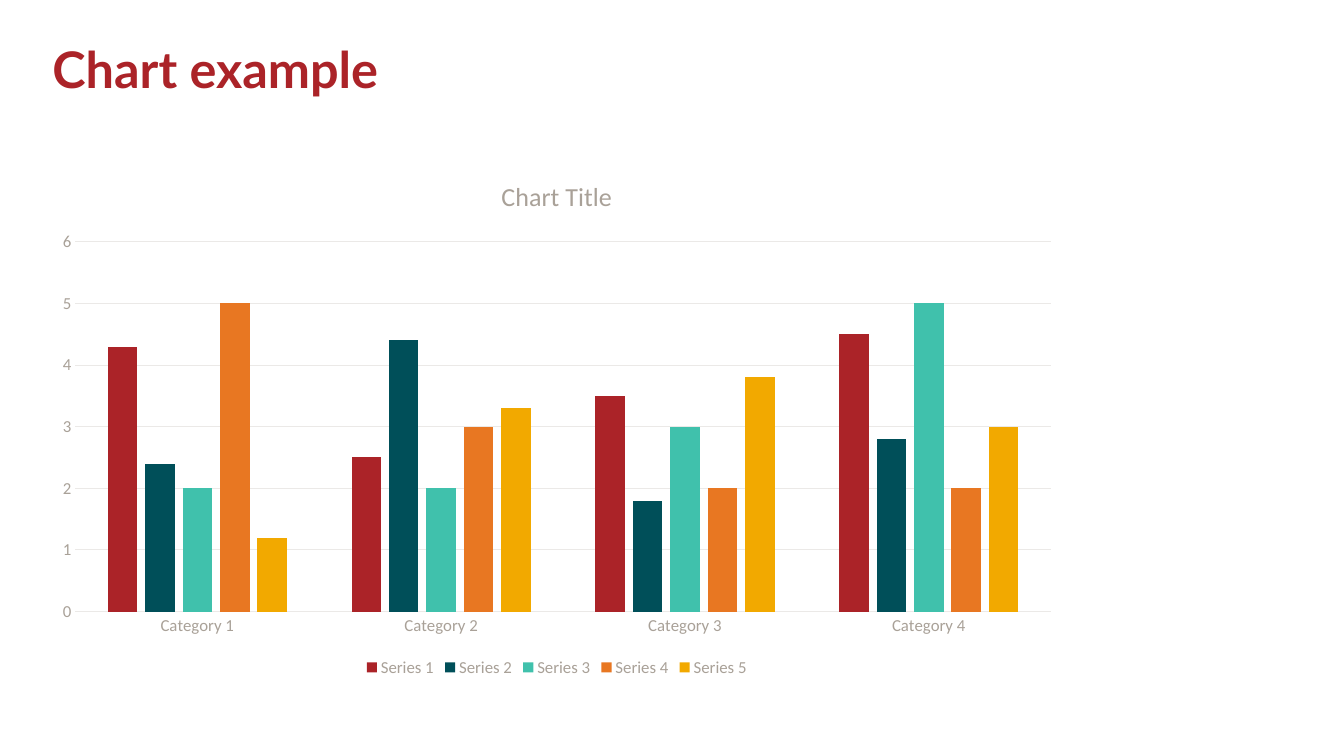
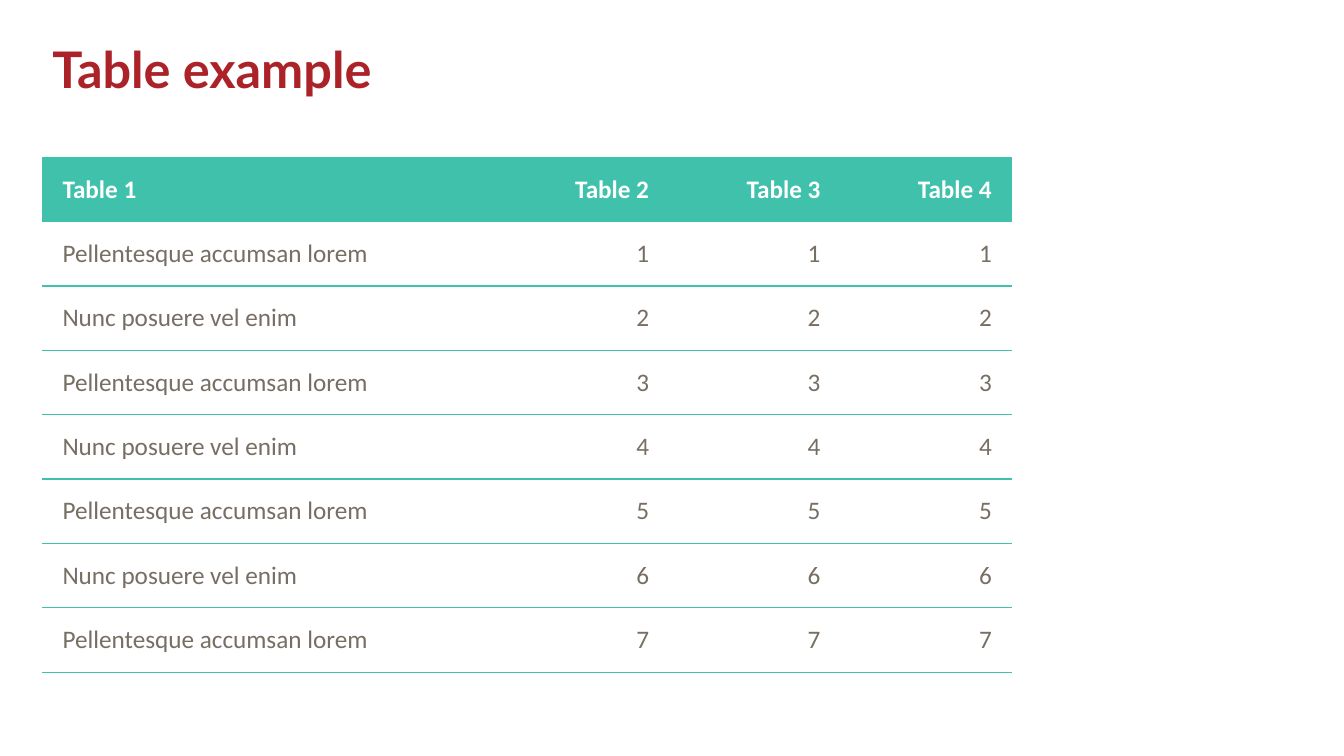
from lxml.etree import SubElement
from pptx import Presentation
from pptx.chart.data import CategoryChartData
from pptx.dml.color import RGBColor
from pptx.enum.chart import XL_CHART_TYPE as ChartType
from pptx.enum.chart import XL_LEGEND_POSITION as LegendPosition
from pptx.enum.chart import XL_TICK_MARK as TickMark
from pptx.enum.text import MSO_ANCHOR as Anchor
from pptx.enum.text import MSO_AUTO_SIZE as AutoSize
from pptx.enum.text import PP_ALIGN as Align
from pptx.oxml.ns import qn
from pptx.util import Pt

RED, NAVY, TEAL = "AB2328", "004F59", "40C1AC"
ORANGE, YELLOW, WHITE = "E87722", "F2A900", "FFFFFF"
TEXT, MUTED, RULE = "776E64", "A9A198", "EBE9E7"
TITLE_FONT, BODY_FONT = "Lato", "Calibri"

SLIDE_WIDTH, SLIDE_HEIGHT = 960, 540
LEFT, CONTENT_TOP = 30.24, 112.3
TITLE_BOX = (LEFT, 28.8, 735, 75.6)
CHART_BOX = (LEFT, CONTENT_TOP, 735, 374.4)
TABLE_BOX = (LEFT, CONTENT_TOP, 692.6, 368)

CATEGORIES = [f"Category {number}" for number in range(1, 5)]
SERIES = [
    (RED, (4.3, 2.5, 3.5, 4.5)),
    (NAVY, (2.4, 4.4, 1.8, 2.8)),
    (TEAL, (2, 2, 3, 5)),
    (ORANGE, (5, 3, 2, 2)),
    (YELLOW, (1.2, 3.3, 3.8, 3)),
]
ROW_LABELS = ("Nunc posuere vel enim", "Pellentesque accumsan lorem")
TABLE_ROWS = [[f"Table {number}" for number in range(1, 5)]] + [
    [ROW_LABELS[number % 2]] + [str(number)] * 3 for number in range(1, 8)
]
NUMBER_COLUMN = 122.4


def rgb(color):
    """Turn a hex string into a colour."""
    return RGBColor.from_string(color)


def style_font(font, size, color, name=BODY_FONT, bold=False):
    """Set the face, size, weight and colour of a font."""
    font.name, font.size, font.bold = name, Pt(size), bold
    font.color.rgb = rgb(color)


def write(frame, text, align=Align.LEFT, spacing=None, **font_format):
    """Put one formatted paragraph into a text frame."""
    paragraph = frame.paragraphs[0]
    paragraph.alignment = align
    paragraph.line_spacing = spacing
    run = paragraph.add_run()
    run.text = text
    style_font(run.font, **font_format)


def add_titled_slide(presentation, title):
    """Add a title-only slide with the shared title style."""
    slide = presentation.slides.add_slide(presentation.slide_layouts[5])
    shape = slide.shapes.title
    shape.left, shape.top, shape.width, shape.height = map(Pt, TITLE_BOX)
    frame = shape.text_frame
    frame.word_wrap = True
    frame.auto_size = AutoSize.NONE
    frame.vertical_anchor = Anchor.TOP
    write(frame, title, spacing=0.9, size=36, color=RED, name=TITLE_FONT, bold=True)
    return slide


def style_line(line, color):
    """Give a chart line its colour and hairline width."""
    line.color.rgb = rgb(color)
    line.width = Pt(0.75)


def style_axes(chart):
    """Format both axes and the gridlines."""
    for axis in (chart.category_axis, chart.value_axis):
        axis.major_tick_mark = axis.minor_tick_mark = TickMark.NONE
        style_font(axis.tick_labels.font, 12, MUTED)
    style_line(chart.category_axis.format.line, RULE)
    values = chart.value_axis
    values.minimum_scale, values.maximum_scale, values.major_unit = 0, 6, 1
    values.format.line.fill.background()
    values.has_major_gridlines = True
    style_line(values.major_gridlines.format.line, RULE)


def add_column_chart(slide, box):
    """Place the clustered column chart in a box."""
    data = CategoryChartData(number_format="General")
    data.categories = CATEGORIES
    for number, (_, values) in enumerate(SERIES, 1):
        data.add_series(f"Series {number}", values)
    chart = slide.shapes.add_chart(
        ChartType.COLUMN_CLUSTERED, *map(Pt, box), data
    ).chart
    style_font(chart.font, 10, TEXT)
    chart.has_title = True
    write(chart.chart_title.text_frame, "Chart Title", Align.CENTER, size=18.6, color=MUTED)
    chart.chart_title.include_in_layout = False
    chart.has_legend = True
    chart.legend.position = LegendPosition.BOTTOM
    chart.legend.include_in_layout = False
    style_font(chart.legend.font, 12, MUTED)
    style_axes(chart)
    plot = chart.plots[0]
    plot.gap_width, plot.overlap = 219, -27
    plot.vary_by_categories = False
    for series, (color, _) in zip(plot.series, SERIES):
        series.format.fill.solid()
        series.format.fill.fore_color.rgb = rgb(color)
        series.invert_if_negative = False


def set_borders(cell):
    """Rule a cell above and below and leave its sides open."""
    properties = cell._tc.get_or_add_tcPr()
    for side in ("lnL", "lnR"):
        line = SubElement(properties, qn(f"a:{side}"), w="0")
        SubElement(line, qn("a:noFill"))
    for side in ("lnT", "lnB"):
        line = SubElement(properties, qn(f"a:{side}"), w=str(Pt(1)))
        fill = SubElement(line, qn("a:solidFill"))
        SubElement(fill, qn("a:srgbClr"), val=TEAL)


def fill_cell(cell, text, is_header, is_label):
    """Format one table cell and write its text."""
    set_borders(cell)
    if is_header:
        cell.fill.solid()
        cell.fill.fore_color.rgb = rgb(TEAL)
    else:
        cell.fill.background()
    cell.margin_left = cell.margin_right = Pt(14.4)
    cell.margin_top = cell.margin_bottom = Pt(3.6)
    cell.vertical_anchor = Anchor.MIDDLE
    write(
        cell.text_frame,
        text,
        Align.LEFT if is_label else Align.RIGHT,
        size=18,
        color=WHITE if is_header else TEXT,
        bold=is_header,
    )


def add_ruled_table(slide, box):
    """Place the table with its teal header in a box."""
    width, height = box[2:]
    row_count, column_count = len(TABLE_ROWS), len(TABLE_ROWS[0])
    table = slide.shapes.add_table(row_count, column_count, *map(Pt, box)).table
    table.first_row = table.horz_banding = False
    label_column = width - NUMBER_COLUMN * (column_count - 1)
    for index, column in enumerate(table.columns):
        column.width = Pt(NUMBER_COLUMN if index else label_column)
    for row_index, texts in enumerate(TABLE_ROWS):
        table.rows[row_index].height = Pt(height / row_count)
        for column_index, text in enumerate(texts):
            cell = table.cell(row_index, column_index)
            fill_cell(cell, text, row_index == 0, column_index == 0)


def main():
    """Build and save the presentation."""
    presentation = Presentation()
    presentation.slide_width = Pt(SLIDE_WIDTH)
    presentation.slide_height = Pt(SLIDE_HEIGHT)
    add_column_chart(add_titled_slide(presentation, "Chart example"), CHART_BOX)
    add_ruled_table(add_titled_slide(presentation, "Table example"), TABLE_BOX)
    presentation.save("out.pptx")


if __name__ == "__main__":
    main()
